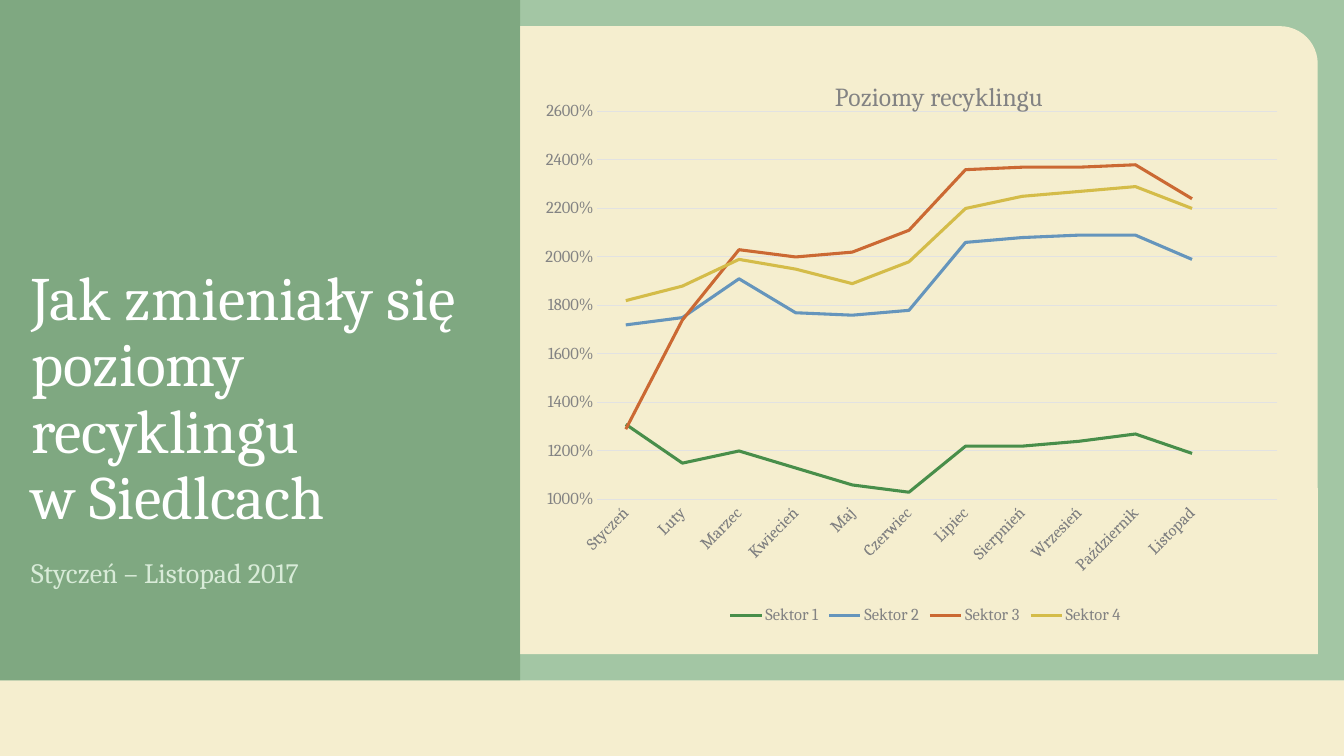
"""Builds the slide on recycling levels in Siedlce with a four-line chart."""
from dataclasses import dataclass

from lxml import etree
from pptx import Presentation
from pptx.chart.data import CategoryChartData
from pptx.dml.color import RGBColor
from pptx.enum.chart import XL_CHART_TYPE as ChartType
from pptx.enum.chart import XL_LEGEND_POSITION as LegendPosition
from pptx.enum.chart import XL_MARKER_STYLE as Marker
from pptx.enum.chart import XL_TICK_MARK as Tick
from pptx.enum.shapes import MSO_SHAPE as Preset
from pptx.enum.text import MSO_ANCHOR as Anchor
from pptx.enum.text import MSO_AUTO_SIZE as AutoSize
from pptx.enum.text import PP_ALIGN as Align
from pptx.oxml.ns import qn
from pptx.util import Inches, Pt


@dataclass(frozen=True)
class Theme:
    font: str = "Cambria"
    cream: str = "F5EECF"
    green: str = "488E4A"
    dark_green: str = "366A38"
    title: str = "FFFFFF"
    subtitle: str = "D8EBD8"
    label: str = "838383"
    grid: str = "E2E2E2"
    title_size: float = 44
    subtitle_size: float = 20
    chart_title_size: float = 18.6
    label_size: float = 12
    grid_width: float = 0.75
    series_width: float = 2.25


THEME = Theme()
TITLE = "Jak zmieniały się poziomy recyklingu\vw Siedlcach"
SUBTITLE = "Styczeń – Listopad 2017"
CHART_TITLE = "Poziomy recyklingu"
MONTHS = ["Styczeń", "Luty", "Marzec", "Kwiecień", "Maj", "Czerwiec", "Lipiec",
          "Sierpnień", "Wrzesień", "Październik", "Listopad", ""]
SECTORS = [
    ("Sektor 1", THEME.green,
     [13.1, 11.5, 12, 11.3, 10.6, 10.3, 12.2, 12.2, 12.4, 12.7, 11.9, None]),
    ("Sektor 2", "6595BC",
     [17.2, 17.5, 19.1, 17.7, 17.6, 17.8, 20.6, 20.8, 20.9, 20.9, 19.9, None]),
    ("Sektor 3", "CB6933",
     [12.9, 17.4, 20.3, 20, 20.2, 21.1, 23.6, 23.7, 23.7, 23.8, 22.4, None]),
    ("Sektor 4", "D4BC49",
     [18.2, 18.8, 19.9, 19.5, 18.9, 19.8, 22, 22.5, 22.7, 22.9, 22, None]),
]

WIDTH, HEIGHT = 13.33, 7.5
BAND_TOP = 6.75
PANEL_WIDTH = 5.16
MARGIN = 0.26
CARD = (PANEL_WIDTH, MARGIN, WIDTH - PANEL_WIDTH - MARGIN, BAND_TOP - 2 * MARGIN)
PADDING = 0.25
CHART = (CARD[0] + PADDING, CARD[1] + PADDING,
         CARD[2] - 2 * PADDING, CARD[3] - 2 * PADDING)
BACKDROP = [
    (Preset.RECTANGLE, (0, BAND_TOP, WIDTH, HEIGHT - BAND_TOP), THEME.cream, 100),
    (Preset.RECTANGLE, (0, 0, WIDTH, BAND_TOP), THEME.green, 50),
    (Preset.ROUND_1_RECTANGLE, CARD, THEME.cream, 100),
    (Preset.RECTANGLE, (0, 0, PANEL_WIDTH, BAND_TOP), THEME.dark_green, 32),
]


def rgb(color):
    """Turn a hex string into a colour."""
    return RGBColor.from_string(color)


def style_font(font, size, color):
    """Apply the theme typeface with a size and colour."""
    font.name, font.size, font.bold = THEME.font, Pt(size), False
    font.color.rgb = rgb(color)


def style_line(line, color, width):
    """Colour a line and set its width in points."""
    line.color.rgb, line.width = rgb(color), Pt(width)


def add_backdrop(page, preset, place, color, opacity):
    """Add one flat background area."""
    box = page.shapes.add_shape(preset, *map(Inches, place))
    box.shadow.inherit = False
    box.line.fill.background()
    box.fill.solid()
    box.fill.fore_color.rgb = rgb(color)
    if preset == Preset.ROUND_1_RECTANGLE:
        box.adjustments[0] = 0.06
    if opacity < 100:
        tint = box.element.spPr.find(".//" + qn("a:srgbClr"))
        etree.SubElement(tint, qn("a:alpha"), val=str(opacity * 1000))


def fill_placeholder(box, place, text, size, color, anchor):
    """Move a placeholder to the front, place it and write its text."""
    box.element.getparent().append(box.element)
    box.left, box.top, box.width, box.height = map(Inches, place)
    frame = box.text_frame
    frame.text, frame.word_wrap = text, True
    frame.auto_size, frame.vertical_anchor = AutoSize.NONE, anchor
    para = frame.paragraphs[0]
    para.alignment, para.line_spacing, para.space_before = Align.LEFT, 0.9, Pt(0)
    props = para._p.get_or_add_pPr()
    props.set("marL", "0")
    props.set("indent", "0")
    etree.SubElement(props, qn("a:buNone"))
    style_font(para.font, size, color)


def set_layout(owner, before, **values):
    """Give a chart part a manual layout, written ahead of the named child."""
    for old in owner.findall(qn("c:layout")):
        owner.remove(old)
    layout = etree.Element(qn("c:layout"))
    manual = etree.SubElement(layout, qn("c:manualLayout"))
    for name, value in values.items():
        etree.SubElement(manual, qn("c:" + name), val=str(value))
    owner.find(qn(before)).addprevious(layout)


def add_recycling_chart(page):
    """Add the line chart of the four sectors."""
    data = CategoryChartData(number_format="0%")
    data.categories = MONTHS
    for name, _, values in SECTORS:
        data.add_series(name, values)
    chart = page.shapes.add_chart(ChartType.LINE, *map(Inches, CHART), data).chart
    style_font(chart.font, THEME.label_size, THEME.label)

    chart.has_title = True
    heading = chart.chart_title
    heading.text_frame.text = CHART_TITLE
    style_font(heading.text_frame.paragraphs[0].font,
               THEME.chart_title_size, THEME.label)
    heading.include_in_layout = False
    set_layout(heading._element, "c:overlay", xMode="edge", yMode="edge", x=0.37, y=0.04)

    chart.has_legend = True
    chart.legend.position = LegendPosition.BOTTOM
    chart.legend.include_in_layout = False
    style_font(chart.legend.font, THEME.label_size, THEME.label)

    months, levels = chart.category_axis, chart.value_axis
    for axis in (months, levels):
        axis.major_tick_mark = axis.minor_tick_mark = Tick.NONE
        style_font(axis.tick_labels.font, THEME.label_size, THEME.label)
    style_line(months.format.line, THEME.grid, THEME.grid_width)
    months._element.find(qn("c:txPr")).find(qn("a:bodyPr")).set("rot", "-2700000")
    levels.minimum_scale, levels.maximum_scale, levels.major_unit = 10, 26, 2
    levels.tick_labels.number_format = "0%"
    levels.tick_labels.number_format_is_linked = False
    levels.format.line.fill.background()
    style_line(levels.major_gridlines.format.line, THEME.grid, THEME.grid_width)

    plot = chart.plots[0]
    plot.vary_by_categories = False
    for series, (_, color, _) in zip(plot.series, SECTORS):
        series.smooth = False
        series.marker.style = Marker.NONE
        style_line(series.format.line, color, THEME.series_width)
    set_layout(plot._element.getparent(), "c:lineChart", layoutTarget="inner",
               xMode="edge", yMode="edge", x=0.053, y=0.104, w=0.926, h=0.672)


def main():
    """Build and save the deck."""
    deck = Presentation()
    deck.slide_width, deck.slide_height = Inches(WIDTH), Inches(HEIGHT)
    page = deck.slides.add_slide(deck.slide_layouts[1])
    for area in BACKDROP:
        add_backdrop(page, *area)
    fill_placeholder(page.shapes.title, (0.21, MARGIN, 4.57, 5.08), TITLE,
                     THEME.title_size, THEME.title, Anchor.BOTTOM)
    fill_placeholder(page.placeholders[1], (0.21, 5.5, 4.57, 1), SUBTITLE,
                     THEME.subtitle_size, THEME.subtitle, Anchor.TOP)
    add_recycling_chart(page)
    deck.save("out.pptx")


if __name__ == "__main__":
    main()
